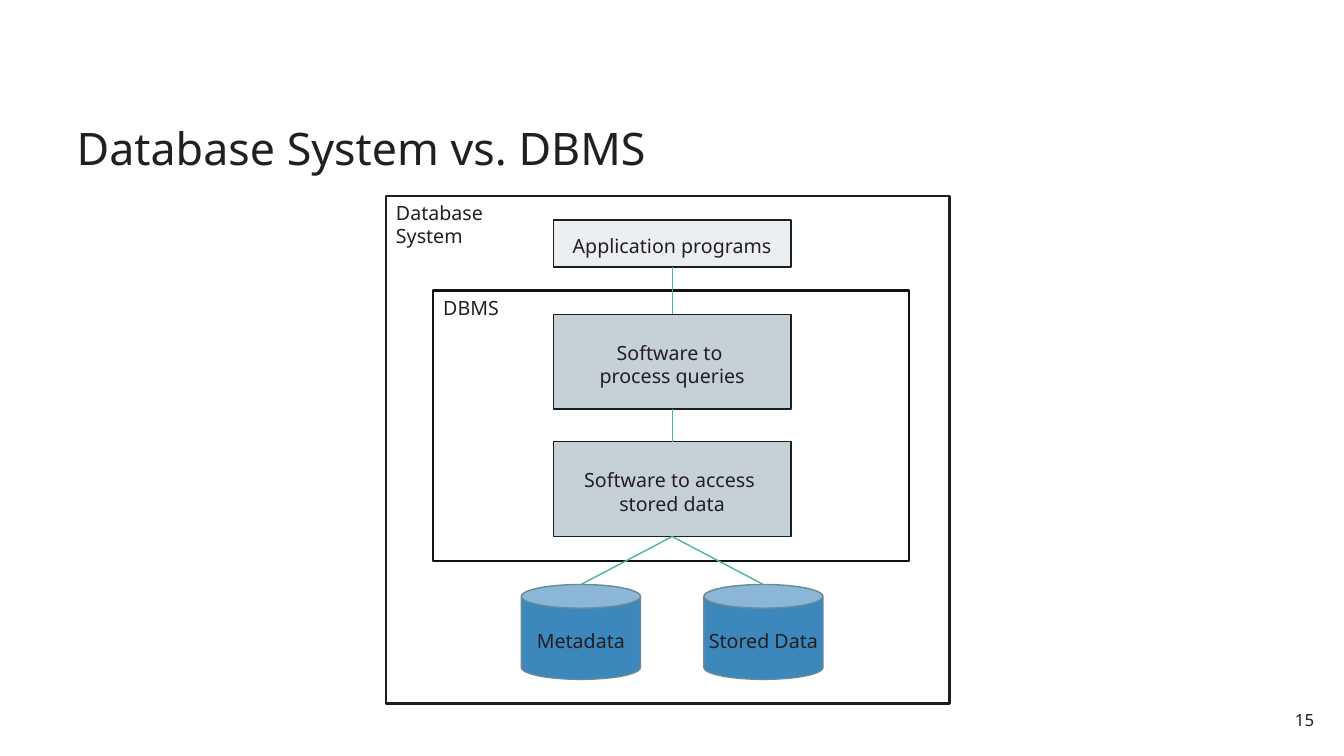
from copy import deepcopy
from pptx import Presentation
from pptx.dml.color import RGBColor
from pptx.enum.shapes import MSO_CONNECTOR as CONN, MSO_SHAPE as SHAPE
from pptx.enum.text import MSO_ANCHOR as ANCHOR, MSO_AUTO_SIZE as AUTO, PP_ALIGN as ALIGN
from pptx.oxml.ns import qn
from pptx.oxml.xmlchemy import OxmlElement
from pptx.util import Cm, Pt

# Content
TITLE = "Database System vs. DBMS"
NUMBER = "15"
COLORS = {"text": "231F20", "edge": "191F22", "dbms": "121010", "app": "ECEFF2",
          "software": "C5D0D7", "can": "3C87BB", "can_edge": "6B879A", "link": "4BB693"}
# Frames: text, left, top, width, height, edge
FRAMES = [("Database\vSystem", 9.73, 4.93, 14.2, 12.8, "edge"),
          ("DBMS", 10.92, 7.32, 11.99, 6.81, "dbms")]
# Boxes: paragraphs, top, height, fill, wrap
BOXES = [(["Application programs"], 5.54, 1.19, "app", True),
         (["Software to ", "process queries"], 7.92, 2.39, "software", False),
         (["Software to access ", "stored data"], 11.13, 2.39, "software", False)]
STORES = ["Metadata", "Stored Data"]

# Layout, in centimetres
CENTER, BOX_W = 16.94, 5.99
STORE_W, STORE_H, STORE_TOP, STORE_STEP = 3.0, 2.39, 14.73, 4.6


def rgb(name):
    return RGBColor.from_string(COLORS[name])


def put_text(tf, lines, size=14, align=ALIGN.LEFT, anchor=ANCHOR.TOP,
             insets=(0.25, 0.13, 0.25, 0), wrap=True, spacing=None):
    tf.auto_size = AUTO.NONE
    tf.word_wrap, tf.vertical_anchor = wrap, anchor
    tf.margin_left, tf.margin_top, tf.margin_right, tf.margin_bottom = map(Cm, insets)
    for i, line in enumerate(lines):
        p = tf.add_paragraph() if i else tf.paragraphs[0]
        p.text, p.alignment = line, align
        if spacing:
            p.line_spacing = spacing
        for r in p.runs:
            r.font.size, r.font.name = Pt(size), "Noto Sans"
            r.font.color.rgb = rgb("text")
        # Line breaks take the format of the text around them
        for br in p._p.findall(qn("a:br")):
            br.append(deepcopy(p.runs[0]._r.rPr))


def add_box(kind, area, lines, edge, fill=None, weight=1, **fmt):
    sp = s.shapes.add_shape(kind, *map(Cm, area))
    sp.shadow.inherit = False
    if fill:
        sp.fill.solid()
        sp.fill.fore_color.rgb = rgb(fill)
    else:
        sp.fill.background()
    sp.line.color.rgb, sp.line.width = rgb(edge), Pt(weight)
    put_text(sp.text_frame, lines, **fmt)


def add_link(x1, y1, x2, y2):
    link = s.shapes.add_connector(CONN.STRAIGHT, *map(Cm, (x1, y1, x2, y2)))
    link.line.color.rgb, link.line.width = rgb("link"), Pt(1)
    link._element.spPr.append(OxmlElement("a:effectLst"))


prs = Presentation()
prs.slide_width, prs.slide_height = Cm(33.87), Cm(19.05)
s = prs.slides.add_slide(prs.slide_layouts[5])

# Title
title = s.shapes.title
title.left, title.top, title.width, title.height = map(Cm, (1.73, 1.93, 30.4, 2.59))
put_text(title.text_frame, [TITLE], size=32, anchor=ANCHOR.BOTTOM,
         insets=(0.2, 0.1, 0.2, 0.1), spacing=0.9)

# Slide number
number = s.shapes.add_textbox(*map(Cm, (32.13, 17.73, 1.19, 0.79)))
put_text(number.text_frame, [NUMBER], size=12, align=ALIGN.RIGHT,
         insets=(0.2, 0.15, 0.2, 0.15))

# System frames
for text, *area, edge in FRAMES:
    add_box(SHAPE.RECTANGLE, area, [text], edge, weight=1.5)

# Data stores, spread evenly about the centre
store_xs = [CENTER + (i - (len(STORES) - 1) / 2) * STORE_STEP for i in range(len(STORES))]
for text, x in zip(STORES, store_xs):
    add_box(SHAPE.CAN, (x - STORE_W / 2, STORE_TOP, STORE_W, STORE_H), [text], "can_edge",
            fill="can", align=ALIGN.CENTER, anchor=ANCHOR.MIDDLE, wrap=False)

# Software boxes
for lines, top, height, fill, wrap in BOXES:
    add_box(SHAPE.RECTANGLE, (CENTER - BOX_W / 2, top, BOX_W, height), lines, "edge",
            fill=fill, align=ALIGN.CENTER, anchor=ANCHOR.MIDDLE, wrap=wrap)

# Links: box to box, then the last box to each store
bottoms = [top + height for _, top, height, *_ in BOXES]
for bottom, box in zip(bottoms, BOXES[1:]):
    add_link(CENTER, bottom, CENTER, box[1])
for x in store_xs:
    add_link(CENTER, bottoms[-1], x, STORE_TOP)

prs.save("out.pptx")
